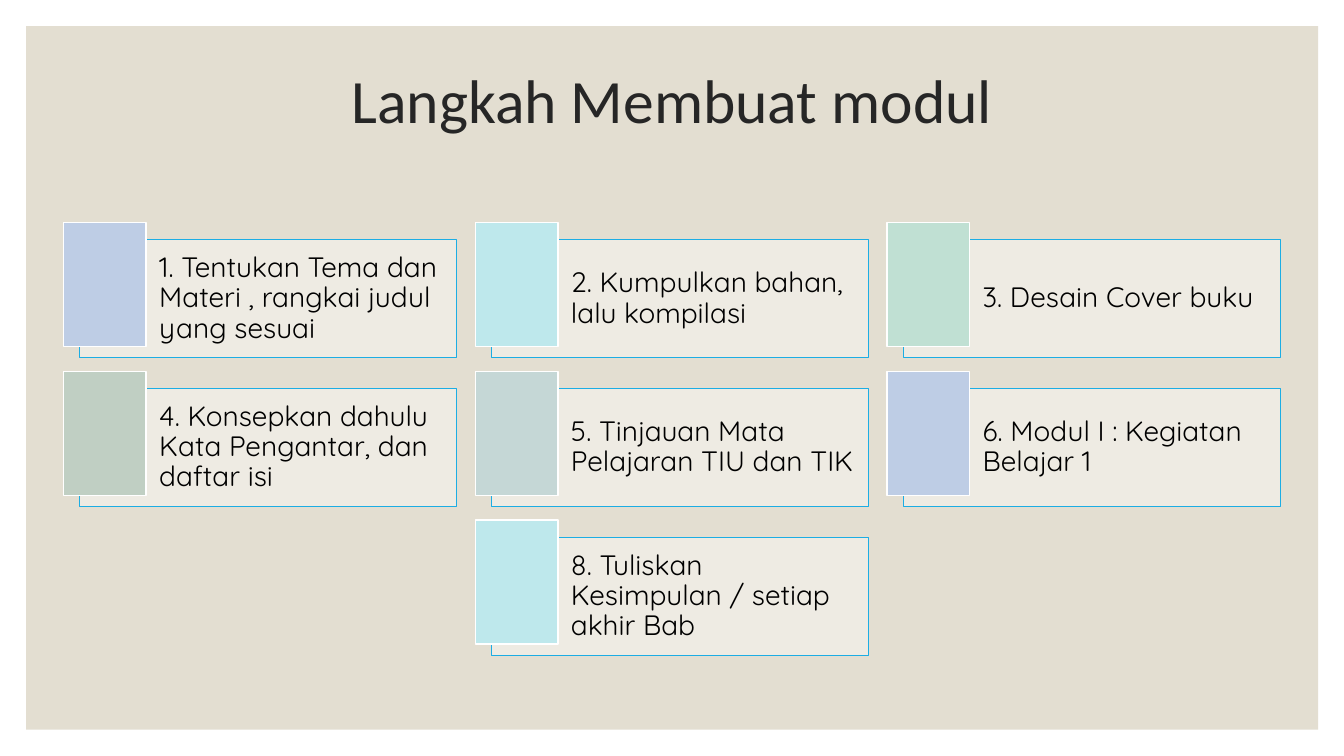
from lxml import etree
from pptx import Presentation
from pptx import util as u
from pptx.dml.color import RGBColor
from pptx.enum import shapes, text
from pptx.oxml.ns import qn

PX = 4572
SLIDE = (2667, 1500)
COLORS = {
    "white": "FFFFFF", "sand": "E3DED1", "title": "262626", "step": "000000",
    "border": "1CADE4", "blue": "BECDE5", "aqua": "BEE8EC", "mint": "C0E0D3",
    "sage": "C0CFC3", "mist": "C5D7D6",
}
STEPS = [
    (0, 0, "blue", "1. Tentukan Tema dan Materi , rangkai judul yang sesuai"),
    (1, 0, "aqua", "2. Kumpulkan bahan, lalu kompilasi"),
    (2, 0, "mint", "3. Desain Cover buku"),
    (0, 1, "sage", "4. Konsepkan dahulu Kata Pengantar, dan daftar isi"),
    (1, 1, "mist", "5. Tinjauan Mata Pelajaran TIU dan TIK"),
    (2, 1, "blue", "6. Modul I : Kegiatan Belajar 1"),
    (1, 2, "aqua", "8. Tuliskan Kesimpulan / setiap akhir Bab"),
]


def px(*lengths):
    return [u.Emu(length * PX) for length in lengths]


def rgb(name):
    return RGBColor.from_string(COLORS[name])


def add_block(slide, box, fill, border=None, weight=0, opacity=100):
    block = slide.shapes.add_shape(shapes.MSO_SHAPE.RECTANGLE, *px(*box))
    block.shadow.inherit = False
    block.fill.solid()
    block.fill.fore_color.rgb = rgb(fill)
    if opacity < 100:
        tint = block.fill._xPr.find(qn("a:solidFill"))[0]
        etree.SubElement(tint, qn("a:alpha"), val=str(opacity * 1000))
    if border:
        block.line.color.rgb = rgb(border)
        block.line.width = u.Pt(weight)
    else:
        block.line.fill.background()
    return block


def write(shape, wording, font, size, color, align, insets):
    frame = shape.text_frame
    frame.word_wrap = True
    frame.vertical_anchor = text.MSO_ANCHOR.MIDDLE
    (frame.margin_left, frame.margin_top,
     frame.margin_right, frame.margin_bottom) = px(*insets)
    paragraph = frame.paragraphs[0]
    paragraph.text = wording
    paragraph.alignment = align
    paragraph.line_spacing = 0.9
    paragraph.font.name = font
    paragraph.font.size = u.Pt(size)
    paragraph.font.color.rgb = rgb(color)


def add_title(slide, box, wording):
    title = slide.shapes.add_textbox(*px(*box))
    write(title, wording, "Calibri", 44, "title", text.PP_ALIGN.CENTER, (20, 10, 20, 10))


def add_step(slide, box, swatch_color, wording):
    left, top, width, height = box
    panel_box = (left + 32, top + 34, width - 32, height - 34)
    panel = add_block(slide, panel_box, "white", "border", 0.5, opacity=40)
    write(panel, wording, "Quicksand", 20, "step", text.PP_ALIGN.LEFT, (158, 16, 16, 16))
    add_block(slide, (left, top, 164, height - 22), swatch_color, "white", 1)


def add_step_grid(slide, box):
    left, top, width, height = box
    card_width, card_height = 780, 268
    column_step = (width - card_width) // 2
    row_step = (height - card_height) // 2
    for column, row, swatch_color, wording in STEPS:
        card = (left + column * column_step, top + row * row_step, card_width, card_height)
        add_step(slide, card, swatch_color, wording)


def main():
    """Build the slide of module-writing steps."""
    deck = Presentation()
    deck.slide_width, deck.slide_height = px(*SLIDE)
    slide = deck.slides.add_slide(deck.slide_layouts[6])
    add_block(slide, (52, 52, 2564, 1396), "sand")
    add_title(slide, (234, 56, 2200, 300), "Langkah Membuat modul")
    add_step_grid(slide, (126, 442, 2414, 858))
    deck.save("out.pptx")


if __name__ == "__main__":
    main()
